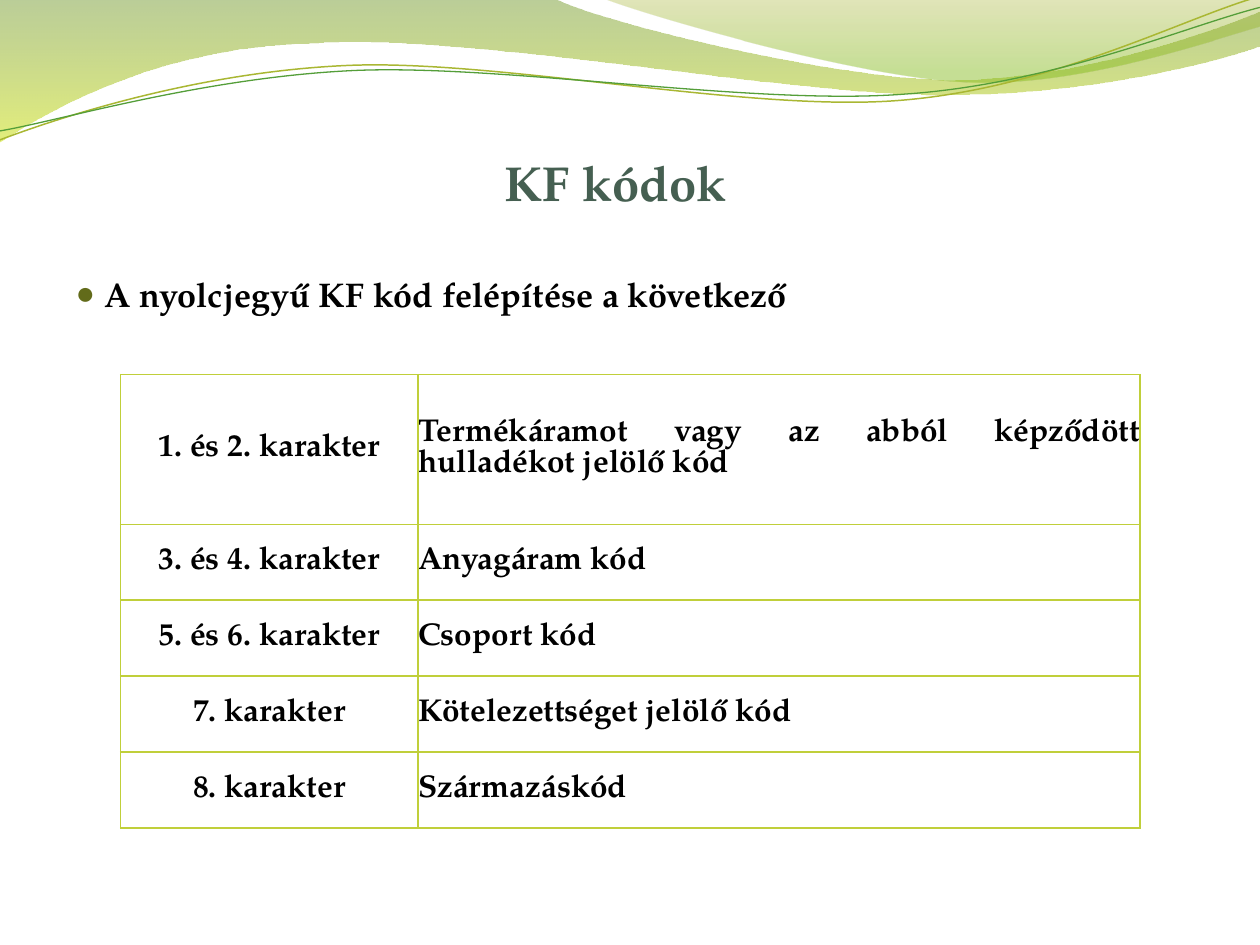
from lxml.etree import SubElement
from pptx import Presentation
from pptx.dml.color import RGBColor
from pptx.enum.text import MSO_ANCHOR as Anchor, MSO_AUTO_SIZE as AutoSize, PP_ALIGN as Align
from pptx.oxml import parse_xml
from pptx.oxml.ns import nsdecls, qn
from pptx.util import Cm, Pt

FONT = "TeX Gyre Pagella"
COLORS = {
    "title": "455F51", "text": "000000", "bullet": "626B1A", "border": "C0CF3A",
    "band_top": "69921C", "band_bottom": "CCE10F",
    "fan_top": "9BAA1A", "fan_bottom": "81BA16",
    "olive": "A9B733", "green": "549E39",
}
# Outlines in cm: two numbers are a straight step, six a Bézier step.
BAND = [(0, 0), (11.18, -0.03), (12.07, 0.43, 16.84, 1.6, 19.25, 1.6),
        (21.67, 1.6, 24.33, 0.66, 25.4, 0.23), (25.43, 0.91),
        (24.97, 1.12, 22.07, 1.93, 18.95, 1.91), (15.8, 1.91, 9.68, 0.71, 6.53, 0.86),
        (3.28, 0.91, 1.17, 2.11, -0.03, 2.87)]
FAN = [(12.17, -0.03), (12.93, 0.28, 17.32, 1.57, 19.51, 1.65),
       (21.72, 1.75, 24.41, 0.81, 25.4, 0.53), (25.4, 0)]
OLIVE_LINE = [(0, 2.82), (1.22, 2.36, 3.99, 1.45, 7.01, 1.32),
              (10.03, 1.19, 15.04, 2.26, 18.08, 2.03), (21.16, 1.8, 23.83, 0.38, 25.32, -0.05)]
GREEN_LINE = [(0, 2.64), (1.19, 2.44, 4.14, 1.55, 7.19, 1.42),
              (10.21, 1.3, 15.16, 2.13, 18.21, 1.9), (21.23, 1.7, 23.9, 0.53, 25.4, 0.15)]
CODE_PARTS = [
    ("1. és 2. karakter", "Termékáramot vagy az abból képződött hulladékot jelölő kód"),
    ("3. és 4. karakter", "Anyagáram kód"),
    ("5. és 6. karakter", "Csoport kód"),
    ("7. karakter", "Kötelezettséget jelölő kód"),
    ("8. karakter", "Származáskód"),
]


def rgb(name):
    return RGBColor.from_string(COLORS[name])


def set_attrs(obj, values):
    for name, value in values.items():
        setattr(obj, name, value)


def write(tf, text, size, color, **paragraph_format):
    p = tf.paragraphs[0]
    set_attrs(p, paragraph_format)
    r = p.add_run()
    r.text = text
    set_attrs(r.font, {"name": FONT, "size": Pt(size), "bold": True})
    r.font.color.rgb = rgb(color)
    return p


def add_outline(s, left, top, outline, close):
    """Draw every point as a corner, then join threes of them into Bézier steps."""
    points = [(left + Cm(x), top + Cm(y))
              for step in outline for x, y in zip(step[::2], step[1::2])]
    builder = s.shapes.build_freeform(*points[0])
    builder.add_line_segments(points[1:], close=close)
    sp = builder.convert_to_shape()
    sp.shadow.inherit = False
    corners = iter(list(sp._element.iter(qn("a:lnTo"))))
    for step in outline[1:]:
        curve = next(corners)
        if len(step) == 6:
            curve.tag = qn("a:cubicBezTo")
            for corner in (next(corners), next(corners)):
                curve.append(corner[0])
                corner.getparent().remove(corner)
    return sp


def add_waves(s, left, top):
    areas = [(BAND, [(0, "band_top", 45), (1, "band_bottom", 55)]),
             (FAN, [(0, "fan_top", 30), (0.8, "fan_bottom", 45)])]
    for outline, stops in areas:
        sp = add_outline(s, left, top, outline, True)
        sp.line.fill.background()
        sp.fill.gradient()
        sp.fill.gradient_angle = 270
        for stop, (position, color, _) in zip(sp.fill.gradient_stops, stops):
            stop.position = position
            stop.color.rgb = rgb(color)
        for clr, (_, _, opacity) in zip(sp._element.spPr.iter(qn("a:srgbClr")), stops):
            SubElement(clr, qn("a:alpha"), val=str(opacity * 1000))
    for outline, color, width in [(OLIVE_LINE, "olive", 0.85), (GREEN_LINE, "green", 0.75)]:
        sp = add_outline(s, left, top, outline, False)
        sp.fill.background()
        sp.line.color.rgb = rgb(color)
        sp.line.width = Pt(width)


def place(s, ph, left, top, width, height):
    """Move a placeholder to its box, in front of what is drawn so far."""
    set_attrs(ph, {"left": left, "top": top, "width": width, "height": height})
    s.shapes._spTree.append(ph._element)


def add_title(s, *box):
    ph = s.shapes.title
    place(s, ph, *box)
    tf = ph.text_frame
    set_attrs(tf, {"vertical_anchor": Anchor.BOTTOM, "auto_size": AutoSize.NONE,
                   "margin_left": 0, "margin_right": 0, "margin_top": Cm(0.13),
                   "margin_bottom": 0})
    write(tf, "KF kódok", 28, "title", alignment=Align.CENTER)


def add_body(s, *box):
    ph = s.placeholders[1]
    place(s, ph, *box)
    ph.text_frame.auto_size = AutoSize.NONE
    p = write(ph.text_frame, "A nyolcjegyű KF kód felépítése a következő", 19.5, "text",
              space_before=Pt(3.9))
    pPr = p._p.get_or_add_pPr()
    pPr.set("marL", str(Cm(0.58)))
    pPr.set("indent", str(-Cm(0.58)))
    SubElement(SubElement(pPr, qn("a:buClr")), qn("a:srgbClr"), val=COLORS["bullet"])
    SubElement(pPr, qn("a:buSzPct"), val="95000")
    SubElement(pPr, qn("a:buChar"), char="●")


def add_borders(cell):
    tcPr = cell._tc.get_or_add_tcPr()
    for i, side in enumerate("LRTB"):
        tcPr.insert(i, parse_xml(
            f'<a:ln{side} {nsdecls("a")} w="{Pt(1)}"><a:solidFill>'
            f'<a:srgbClr val="{COLORS["border"]}"/></a:solidFill></a:ln{side}>'))


def add_code_table(s, left, top, widths, heights):
    table = s.shapes.add_table(len(heights), len(widths), left, top,
                               sum(widths), sum(heights)).table
    set_attrs(table, {"first_row": False, "horz_banding": False})
    for column, width in zip(table.columns, widths):
        column.width = width
    for row, height, texts in zip(table.rows, heights, CODE_PARTS):
        row.height = height
        for cell, text, align in zip(row.cells, texts, (Align.CENTER, Align.JUSTIFY)):
            set_attrs(cell, {"vertical_anchor": Anchor.MIDDLE, "margin_left": 0,
                             "margin_right": 0, "margin_top": 0, "margin_bottom": 0})
            cell.fill.background()
            add_borders(cell)
            write(cell.text_frame, text, 18, "text", alignment=align)


def main():
    prs = Presentation()
    prs.slide_width, prs.slide_height = Cm(25.4), Cm(19.05)
    s = prs.slides.add_slide(prs.slide_layouts[1])
    add_waves(s, 0, 0)
    add_title(s, Cm(-0.25), Cm(1.42), Cm(25.32), Cm(2.84))
    add_body(s, Cm(1.27), Cm(5.38), Cm(22.86), Cm(12.19))
    add_code_table(s, Cm(2.43), Cm(7.55), [Cm(6), Cm(14.55)], [Cm(3.02)] + [Cm(1.53)] * 4)
    prs.save("out.pptx")


if __name__ == "__main__":
    main()
